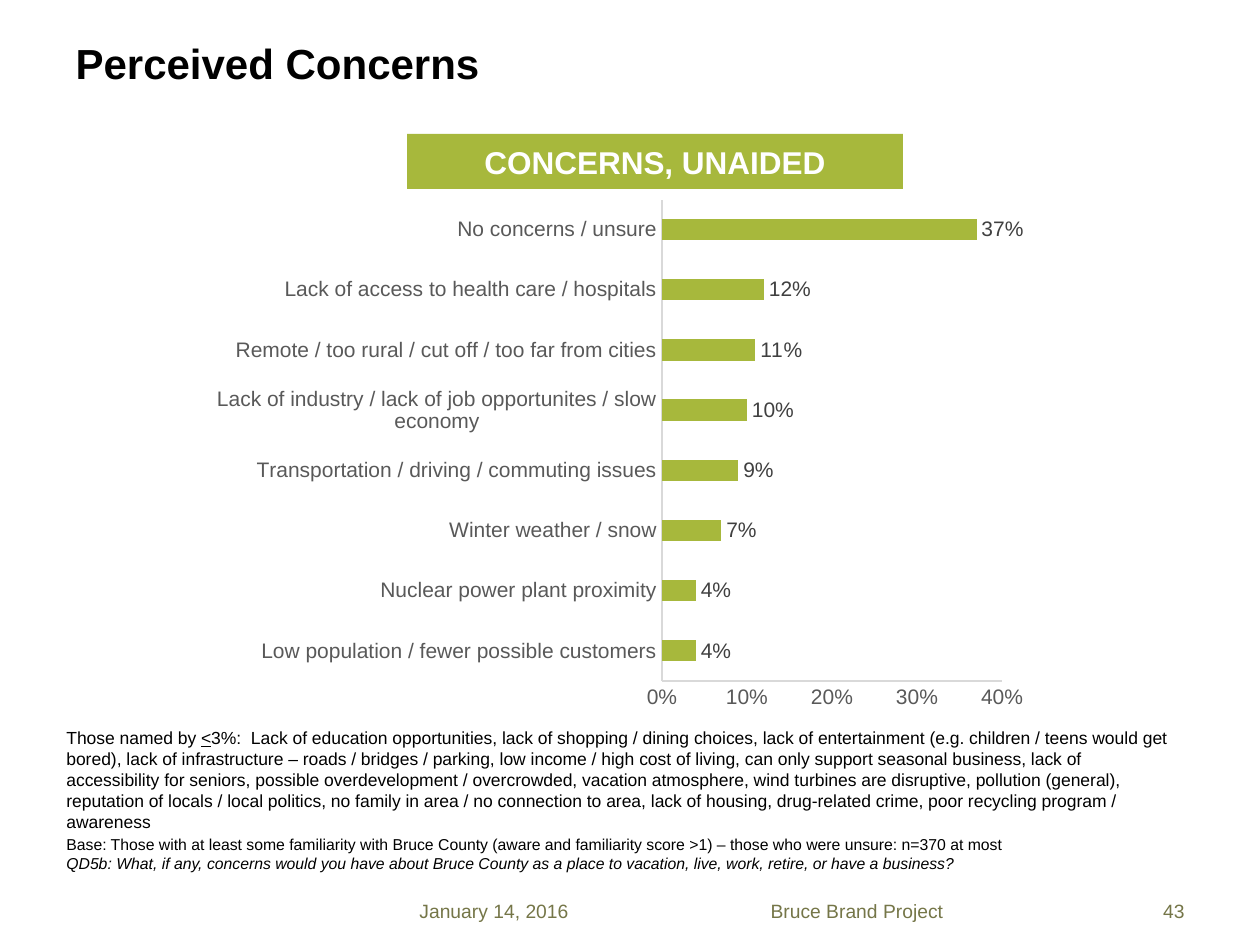
from lxml import etree
from pptx import Presentation
from pptx.chart.data import CategoryChartData
from pptx.dml.color import RGBColor
from pptx.enum.chart import XL_CHART_TYPE, XL_LABEL_POSITION, XL_TICK_MARK
from pptx.enum.shapes import MSO_SHAPE
from pptx.enum.text import MSO_ANCHOR, PP_ALIGN
from pptx.util import Pt

EMU_PER_PX = 914400 / 126
FONT = "Arial"
COLORS = {
    "text": "000000",
    "green": "A7B83C",
    "footer": "757648",
    "axis_text": "595959",
    "axis_line": "D9D9D9",
    "label": "404040",
    "white": "FFFFFF",
}


def px(*lengths):
    return [round(length * EMU_PER_PX) for length in lengths]


def write(shape, paragraphs, size, color, align=PP_ALIGN.LEFT, anchor=MSO_ANCHOR.MIDDLE):
    """Fill a shape with paragraphs, each a list of (text, style) runs."""
    frame = shape.text_frame
    frame.word_wrap = True
    frame.vertical_anchor = anchor
    for index, runs in enumerate(paragraphs):
        paragraph = frame.add_paragraph() if index else frame.paragraphs[0]
        paragraph.alignment = align
        for text, style in runs:
            run = paragraph.add_run()
            run.text = text
            run.font.name = FONT
            run.font.size = Pt(size)
            run.font.color.rgb = RGBColor.from_string(COLORS[color])
            run.font.bold = style == "bold"
            run.font.italic = style == "italic"
            run.font.underline = style == "underline"


prs = Presentation()
prs.slide_width, prs.slide_height = px(1260, 945)
slide = prs.slides.add_slide(prs.slide_layouts[5])
shapes = slide.shapes

title = shapes.title
title.left, title.top, title.width, title.height = px(63, 30, 840, 66)
write(title, [[("Perceived Concerns", "bold")]], 24, "text")

footers = [
    ("January 14, 2016", 407, 220, PP_ALIGN.LEFT),
    ("Bruce Brand Project", 629, 456, PP_ALIGN.CENTER),
    ("43", 1086, 111, PP_ALIGN.RIGHT),
]
for text, left, width, align in footers:
    footer = shapes.add_textbox(*px(left, 893, width, 35))
    write(footer, [[(text, None)]], 11, "footer", align)

banner = shapes.add_shape(MSO_SHAPE.RECTANGLE, *px(407, 134, 496, 55))
banner.shadow.inherit = False
banner.fill.solid()
banner.fill.fore_color.rgb = RGBColor.from_string(COLORS["green"])
banner.line.fill.background()
write(banner, [[("CONCERNS, UNAIDED", "bold")]], 18, "white", PP_ALIGN.CENTER)

# Concerns chart, listed from the bottom bar up
concerns = {
    "Low population / fewer possible customers": 0.04,
    "Nuclear power plant proximity": 0.04,
    "Winter weather / snow": 0.07,
    "Transportation / driving / commuting issues": 0.09,
    "Lack of industry / lack of job opportunites / slow economy": 0.10,
    "Remote / too rural / cut off / too far from cities": 0.11,
    "Lack of access to health care / hospitals": 0.12,
    "No concerns / unsure": 0.37,
}
data = CategoryChartData(number_format="0%")
data.categories = list(concerns)
data.add_series("Series 1", list(concerns.values()))
chart = shapes.add_chart(XL_CHART_TYPE.BAR_CLUSTERED, *px(200, 189, 840, 532), data).chart
chart.has_legend = False
chart.has_title = False
chart.font.name = FONT
chart.font.size = Pt(10)

for axis in (chart.category_axis, chart.value_axis):
    axis.major_tick_mark = axis.minor_tick_mark = XL_TICK_MARK.NONE
    axis.has_major_gridlines = False
    axis.tick_labels.font.name = FONT
    axis.tick_labels.font.size = Pt(12)
    axis.tick_labels.font.color.rgb = RGBColor.from_string(COLORS["axis_text"])
    axis.format.line.width = Pt(0.75)
    axis.format.line.color.rgb = RGBColor.from_string(COLORS["axis_line"])
chart.value_axis.minimum_scale = 0
chart.value_axis.maximum_scale = 0.4
chart.value_axis.major_unit = 0.1
chart.value_axis.tick_labels.number_format = "0%"
chart.value_axis.tick_labels.number_format_is_linked = False

plot = chart.plots[0]
plot.gap_width = 182
plot.vary_by_categories = False
bars = plot.series[0]
bars.format.fill.solid()
bars.format.fill.fore_color.rgb = RGBColor.from_string(COLORS["green"])
labels = bars.data_labels
labels.show_value = True
labels.number_format = "0%"
labels.number_format_is_linked = False
labels.position = XL_LABEL_POSITION.OUTSIDE_END
labels.font.name = FONT
labels.font.size = Pt(12)
labels.font.color.rgb = RGBColor.from_string(COLORS["label"])

# Fixed plot area, as fractions of the chart
plot_area = chart.element.chart.plotArea
for old_layout in plot_area.findall("{*}layout"):
    plot_area.remove(old_layout)
chart_ns = "{" + plot_area.nsmap["c"] + "}"
layout = etree.Element(chart_ns + "layout")
manual = etree.SubElement(layout, chart_ns + "manualLayout")
for tag, value in [("layoutTarget", "inner"), ("xMode", "edge"), ("yMode", "edge"),
                   ("x", "0.55"), ("y", "0.02"), ("w", "0.405"), ("h", "0.905")]:
    etree.SubElement(manual, chart_ns + tag, val=value)
plot_area.insert(0, layout)

minor_concerns = shapes.add_textbox(*px(54, 721, 1134, 118))
write(minor_concerns, [[
    ("Those named by ", None),
    ("<", "underline"),
    ("3%:  Lack of education opportunities, lack of shopping / dining choices, lack of "
     "entertainment (e.g. children / teens would get bored), lack of infrastructure – roads / "
     "bridges / parking, low income / high cost of living, can only support seasonal business, "
     "lack of accessibility for seniors, possible overdevelopment / overcrowded, vacation "
     "atmosphere, wind turbines are disruptive, pollution (general), reputation of locals / "
     "local politics, no family in area / no connection to area, lack of housing, drug-related "
     "crime, poor recycling program / awareness", None),
]], 10, "text", anchor=MSO_ANCHOR.TOP)

survey_base = shapes.add_textbox(*px(54, 829, 1159, 50))
write(survey_base, [
    [("Base: Those with at least some familiarity with Bruce County (aware and familiarity "
      "score >1) – those who were unsure: n=370 at most", None)],
    [("QD5b: What, if any, concerns would you have about Bruce County as a place to vacation, "
      "live, work, retire, or have a business?", "italic")],
], 9, "text", anchor=MSO_ANCHOR.TOP)

prs.save("out.pptx")
